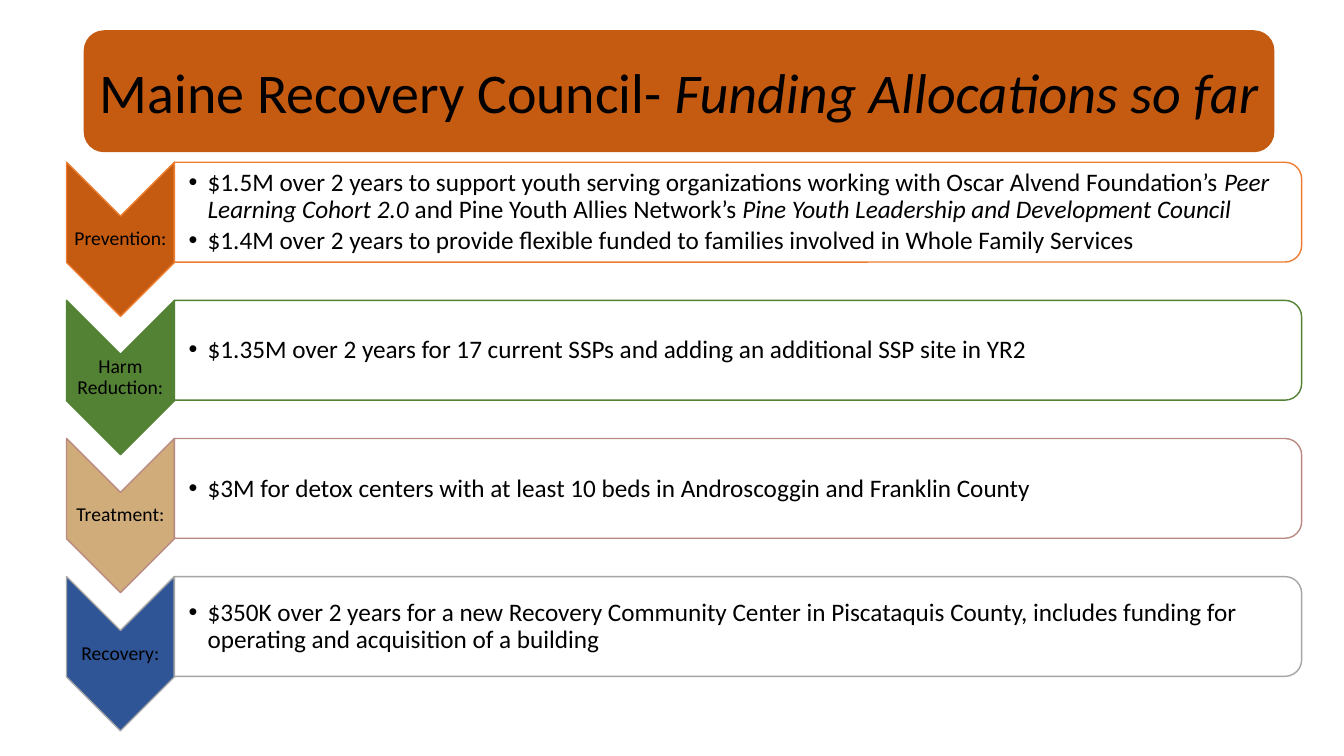
from dataclasses import dataclass

from lxml.etree import SubElement
from pptx import Presentation
from pptx.dml.color import RGBColor
from pptx.enum.shapes import MSO_SHAPE as Preset
from pptx.enum.text import MSO_ANCHOR as Anchor, PP_ALIGN as Align
from pptx.oxml.ns import qn
from pptx.util import Inches, Pt


@dataclass(frozen=True)
class Theme:
    font: str = "Calibri"
    ink: str = "000000"
    paper: str = "FFFFFF"
    banner: str = "C55A11"
    title_size: int = 40
    label_size: int = 14
    body_size: int = 18


THEME = Theme()
ROW_PITCH = 1.37
CHEVRON_WIDTH, CHEVRON_HEIGHT = 1.07, 1.53
BAR_HEIGHT = 0.99
TIGHT = Inches(0.01)

ALLOCATIONS = [
    ("Prevention:", "C55A11", "ED7D31", [
        [("$1.5M over 2 years to support youth serving organizations working with "
          "Oscar Alvend Foundation’s ", False),
         ("Peer Learning Cohort 2.0 ", True),
         ("and Pine Youth Allies Network’s ", False),
         ("Pine Youth Leadership and Development Council", True)],
        [("$1.4M over 2 years to provide flexible funded to families involved in "
          "Whole Family Services", False)],
    ]),
    ("Harm Reduction:", "548235", "548235", [
        [("$1.35M over 2 years for 17 current SSPs and adding an additional SSP "
          "site in YR2", False)],
    ]),
    ("Treatment:", "D0AC7B", "B98A82", [
        [("$3M for detox centers with at least 10 beds in Androscoggin and "
          "Franklin County", False)],
    ]),
    ("Recovery:", "2F5597", "A5A5A5", [
        [("$350K over 2 years for a new Recovery Community Center in Piscataquis "
          "County, includes funding for operating and acquisition of a building",
          False)],
    ]),
]


def apply_format(target, values):
    for name, value in values.items():
        setattr(target, name, value)


def write_paragraph(para, spans, size, **layout):
    apply_format(para, layout)
    for text, italic in spans:
        span = para.add_run()
        span.text = text
        apply_format(span.font, {"name": THEME.font, "size": Pt(size), "italic": italic})
        span.font.color.rgb = RGBColor.from_string(THEME.ink)


def add_bullet(para):
    props = para._p.get_or_add_pPr()
    indents = {"marL": Inches(0.19), "indent": -Inches(0.19)}
    for name, value in indents.items():
        props.set(name, str(value))
    SubElement(props, qn("a:buFont")).set("typeface", "Arial")
    SubElement(props, qn("a:buChar")).set("char", "•")


def add_panel(page, preset, left, top, width, height, fill, line=None):
    panel = page.shapes.add_shape(
        preset, Inches(left), Inches(top), Inches(width), Inches(height))
    panel.shadow.inherit = False
    panel.fill.solid()
    panel.fill.fore_color.rgb = RGBColor.from_string(fill)
    if line:
        panel.line.color.rgb = RGBColor.from_string(line)
        panel.line.width = Pt(1)
    else:
        panel.line.fill.background()
    return panel


def add_turned_panel(page, preset, left, top, width, height, fill, line):
    panel = add_panel(page, preset, left + (width - height) / 2,
                      top + (height - width) / 2, height, width, fill, line)
    panel.rotation = 90
    return panel


def add_text_frame(page, left, top, width, height, margin_left=TIGHT):
    box = page.shapes.add_textbox(
        Inches(left), Inches(top), Inches(width), Inches(height))
    apply_format(box.text_frame, {
        "word_wrap": True, "vertical_anchor": Anchor.MIDDLE,
        "margin_left": margin_left, "margin_right": TIGHT,
        "margin_top": TIGHT, "margin_bottom": TIGHT})
    return box.text_frame


def add_banner(page, left, top, width, height):
    banner = add_panel(page, Preset.ROUNDED_RECTANGLE, left, top, width, height,
                       THEME.banner)
    apply_format(banner.text_frame, {
        "word_wrap": True, "vertical_anchor": Anchor.MIDDLE,
        "margin_left": Inches(0.1), "margin_right": Inches(0.1)})
    write_paragraph(
        banner.text_frame.paragraphs[0],
        [("Maine Recovery Council- ", False), ("Funding Allocations so far", True)],
        THEME.title_size, alignment=Align.CENTER)


def add_allocation(page, left, top, width, label, fill, line, points):
    add_turned_panel(page, Preset.CHEVRON, left, top, CHEVRON_WIDTH, CHEVRON_HEIGHT,
                     fill, line)
    notch = CHEVRON_WIDTH / 2
    label_frame = add_text_frame(page, left, top + notch, CHEVRON_WIDTH,
                                 CHEVRON_HEIGHT - 2 * notch)
    write_paragraph(label_frame.paragraphs[0], [(label, False)], THEME.label_size,
                    alignment=Align.CENTER, line_spacing=0.9, space_after=Pt(4.9))

    bar_left, bar_width = left + CHEVRON_WIDTH, width - CHEVRON_WIDTH
    bar = add_turned_panel(page, Preset.ROUND_2_SAME_RECTANGLE, bar_left, top,
                           bar_width, BAR_HEIGHT, THEME.paper, line)
    colour = bar._element.spPr.find(qn("a:solidFill")).find(qn("a:srgbClr"))
    SubElement(colour, qn("a:alpha")).set("val", "90000")

    body = add_text_frame(page, bar_left, top + 0.05, bar_width - 0.05,
                          BAR_HEIGHT - 0.09, margin_left=Inches(0.14))
    for index, spans in enumerate(points):
        para = body.add_paragraph() if index else body.paragraphs[0]
        write_paragraph(para, spans, THEME.body_size, alignment=Align.LEFT,
                        line_spacing=0.9, space_after=Pt(2.7))
        add_bullet(para)


def add_allocation_list(page, left, top, width):
    for index, allocation in enumerate(ALLOCATIONS):
        add_allocation(page, left, top + index * ROW_PITCH, width, *allocation)


def main():
    deck = Presentation()
    apply_format(deck, {"slide_width": Inches(13.33), "slide_height": Inches(7.5)})
    page = deck.slides.add_slide(deck.slide_layouts[6])
    add_allocation_list(page, 0.66, 1.61, 12.25)
    add_banner(page, 0.83, 0.3, 11.81, 1.21)
    deck.save("out.pptx")


if __name__ == "__main__":
    main()
